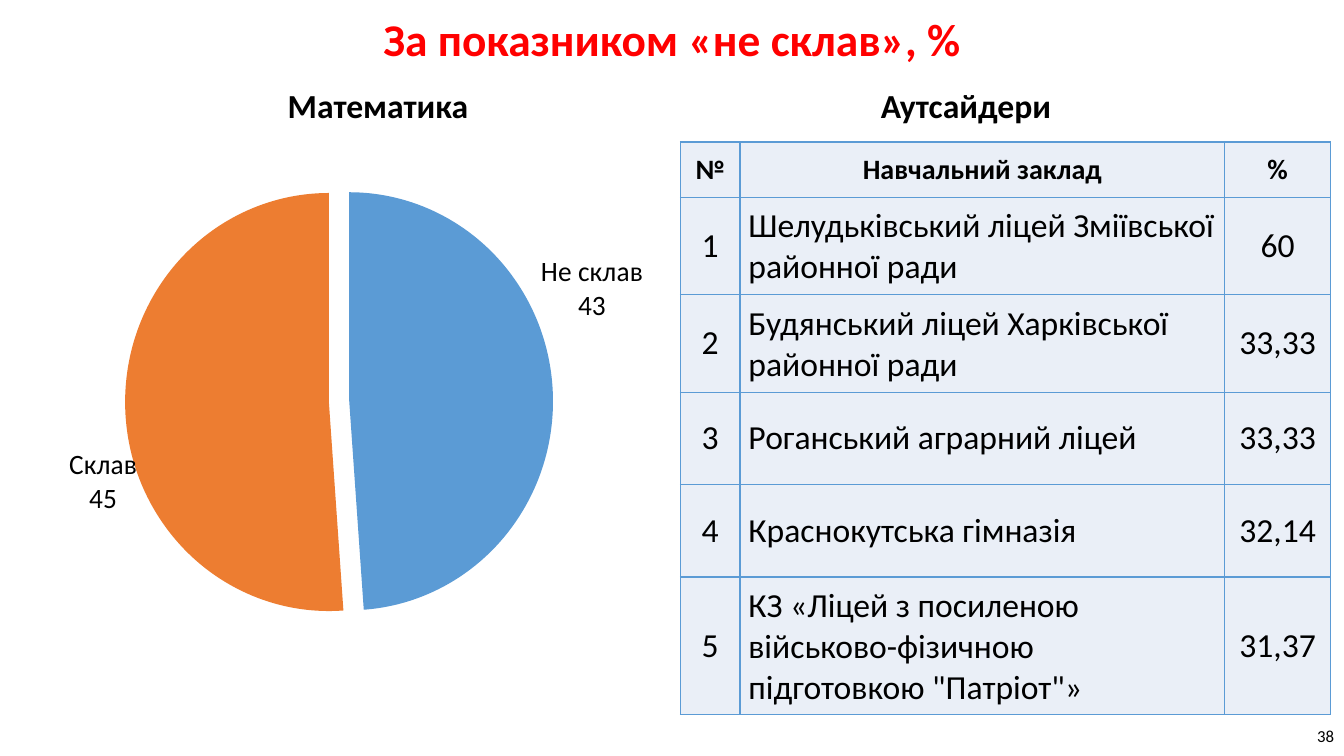
import pptx
import pptx.util
import pptx.chart.data
import pptx.dml.color
import pptx.enum.chart
import pptx.enum.text
import pptx.oxml
import pptx.oxml.ns
from dataclasses import dataclass

ALIGN = pptx.enum.text.PP_ALIGN
ANCHOR = pptx.enum.text.MSO_ANCHOR


@dataclass(frozen=True)
class Theme:
    font: str = "Calibri"
    ink: str = "000000"
    accent: str = "FF0000"
    failed: str = "5B9BD5"
    passed: str = "ED7D31"
    border: str = "5B9BD5"
    cell: str = "EAEFF7"
    title: float = 32.4
    heading: float = 24
    table_head: float = 20
    table_body: float = 24
    label: float = 20
    page: float = 12


THEME = Theme()

# Grid of 160 columns by 90 rows
WIDTH, HEIGHT = pptx.util.Inches(13.33), pptx.util.Inches(7.5)
COLUMNS, ROWS = 160, 90

RESULTS = {"Не склав": 43, "Склав": 45}
SLICE_COLORS = (THEME.failed, THEME.passed)
LABEL_SHIFTS = ((-0.03, -0.19), (0.03, 0.13))

TABLE_COLUMNS = (7.1, 57.7, 12.6)
TABLE_ROWS = (6.6, 11, 11, 11, 11, 15.2)
OUTSIDERS = (
    ("Шелудьківський ліцей Зміївської районної ради", "60"),
    ("Будянський ліцей Харківської районної ради", "33,33"),
    ("Роганський аграрний ліцей", "33,33"),
    ("Краснокутська гімназія", "32,14"),
    ("КЗ «Ліцей з посиленою військово-фізичною підготовкою \"Патріот\"»", "31,37"),
)


def across(columns):
    return round(WIDTH * columns / COLUMNS)


def down(rows):
    return round(HEIGHT * rows / ROWS)


def area(left, top, width, height):
    return across(left), down(top), across(width), down(height)


def rgb(color):
    return pptx.dml.color.RGBColor.from_string(color)


def style_font(font, size, color=THEME.ink, bold=False):
    font.name, font.size, font.bold = THEME.font, pptx.util.Pt(size), bold
    font.color.rgb = rgb(color)


def write(frame, text, size, color=THEME.ink, bold=False, align=ALIGN.CENTER,
          spacing=1.0):
    frame.word_wrap = True
    paragraph = frame.paragraphs[0]
    paragraph.alignment, paragraph.line_spacing = align, spacing
    run = paragraph.add_run()
    run.text = text
    style_font(run.font, size, color, bold)


def add_text(slide, place, text, anchor=ANCHOR.MIDDLE, **text_format):
    frame = slide.shapes.add_textbox(*area(*place)).text_frame
    frame.vertical_anchor = anchor
    write(frame, text, **text_format)


def outline_cell(cell):
    properties = cell._tc.get_or_add_tcPr()
    # Borders come before the fill in the cell properties
    for position, side in enumerate(("lnL", "lnR", "lnT", "lnB")):
        properties.insert(position, pptx.oxml.parse_xml(
            f'<a:{side} {pptx.oxml.ns.nsdecls("a")} w="{pptx.util.Pt(1)}"><a:solidFill>'
            f'<a:srgbClr val="{THEME.border}"/></a:solidFill></a:{side}>'))


def fill_cell(cell, text, **text_format):
    cell.fill.solid()
    cell.fill.fore_color.rgb = rgb(THEME.cell)
    cell.vertical_anchor = ANCHOR.MIDDLE
    cell.margin_left = cell.margin_right = across(1)
    cell.margin_top = cell.margin_bottom = down(1)
    write(cell.text_frame, text, **text_format)
    outline_cell(cell)


def add_outsiders(slide, left, top):
    place = area(left, top, sum(TABLE_COLUMNS), sum(TABLE_ROWS))
    table = slide.shapes.add_table(len(TABLE_ROWS), len(TABLE_COLUMNS), *place).table
    table.first_row = table.horz_banding = False
    for column, width in zip(table.columns, TABLE_COLUMNS):
        column.width = across(width)
    for row, height in zip(table.rows, TABLE_ROWS):
        row.height = down(height)
    for column, heading in enumerate(("№", "Навчальний заклад", "%")):
        fill_cell(table.cell(0, column), heading, size=THEME.table_head, bold=True)
    for rank, (school, share) in enumerate(OUTSIDERS, start=1):
        for column, text in enumerate((str(rank), school, share)):
            fill_cell(table.cell(rank, column), text, size=THEME.table_body,
                      align=ALIGN.LEFT if column == 1 else ALIGN.CENTER)


def manual_layout(inner="", **values):
    settings = "".join(f'<c:{key} val="{value}"/>' for key, value in values.items())
    return pptx.oxml.parse_xml(
        f'<c:layout {pptx.oxml.ns.nsdecls("c")}><c:manualLayout>{inner}{settings}'
        '</c:manualLayout></c:layout>')


def label_slice(point, shift):
    label = point.data_label
    style_font(label.font, THEME.label)
    label.position = pptx.enum.chart.XL_LABEL_POSITION.OUTSIDE_END
    settings = label._get_or_add_dLbl()
    settings.find(pptx.oxml.ns.qn("c:showCatName")).set("val", "1")
    # Each label keeps its name on one line
    for body in settings.iter(pptx.oxml.ns.qn("a:bodyPr")):
        body.set("wrap", "none")
    settings.insert(1, manual_layout(x=shift[0], y=shift[1]))
    settings.append(pptx.oxml.parse_xml(
        f'<c:separator {pptx.oxml.ns.nsdecls("c")}>\n</c:separator>'))


def add_results_pie(slide, place):
    results = pptx.chart.data.CategoryChartData()
    results.categories = list(RESULTS)
    results.add_series("Математика", list(RESULTS.values()))
    chart = slide.shapes.add_chart(
        pptx.enum.chart.XL_CHART_TYPE.PIE_EXPLODED, *area(*place), results).chart
    chart.has_legend = chart.has_title = False
    style_font(chart.font, THEME.label)
    pie = chart.plots[0]
    pie.vary_by_categories = True
    marks = pie.series[0]
    for index, (color, shift) in enumerate(zip(SLICE_COLORS, LABEL_SHIFTS)):
        point = marks.points[index]
        point.format.fill.solid()
        point.format.fill.fore_color.rgb = rgb(color)
        label_slice(point, shift)
    # Slice gap, no leader lines, plot position
    qn = pptx.oxml.ns.qn
    for tag, value in (("c:explosion", "5"), ("c:showLeaderLines", "0")):
        for setting in chart._chartSpace.iter(qn(tag)):
            setting.set("val", value)
    plot_area = chart._chartSpace.chart.plotArea
    for layout in plot_area.findall(qn("c:layout")):
        plot_area.remove(layout)
    plot_area.insert(0, manual_layout(
        '<c:layoutTarget val="inner"/><c:xMode val="edge"/><c:yMode val="edge"/>',
        x=0.11, y=0, w=0.72, h=0.94))


def main():
    deck = pptx.Presentation()
    deck.slide_width, deck.slide_height = WIDTH, HEIGHT
    slide = deck.slides.add_slide(deck.slide_layouts[6])

    # Title and column headings
    add_text(slide, (11, 1.3, 138, 7.4), "За показником «не склав», %",
             size=THEME.title, color=THEME.accent, bold=True, spacing=0.9)
    for left, heading in ((11, "Математика"), (81, "Аутсайдери")):
        add_text(slide, (left, 9.4, 68, 6.1), heading, anchor=ANCHOR.BOTTOM,
                 size=THEME.heading, bold=True, spacing=0.9)

    # Results and the weakest schools
    add_results_pie(slide, (6.1, 16.9, 72.6, 65.8))
    add_outsiders(slide, 81, 16.9)

    # Page number
    add_text(slide, (124, 85.2, 36, 4.8), "38", size=THEME.page, align=ALIGN.RIGHT)
    deck.save("out.pptx")


if __name__ == "__main__":
    main()
